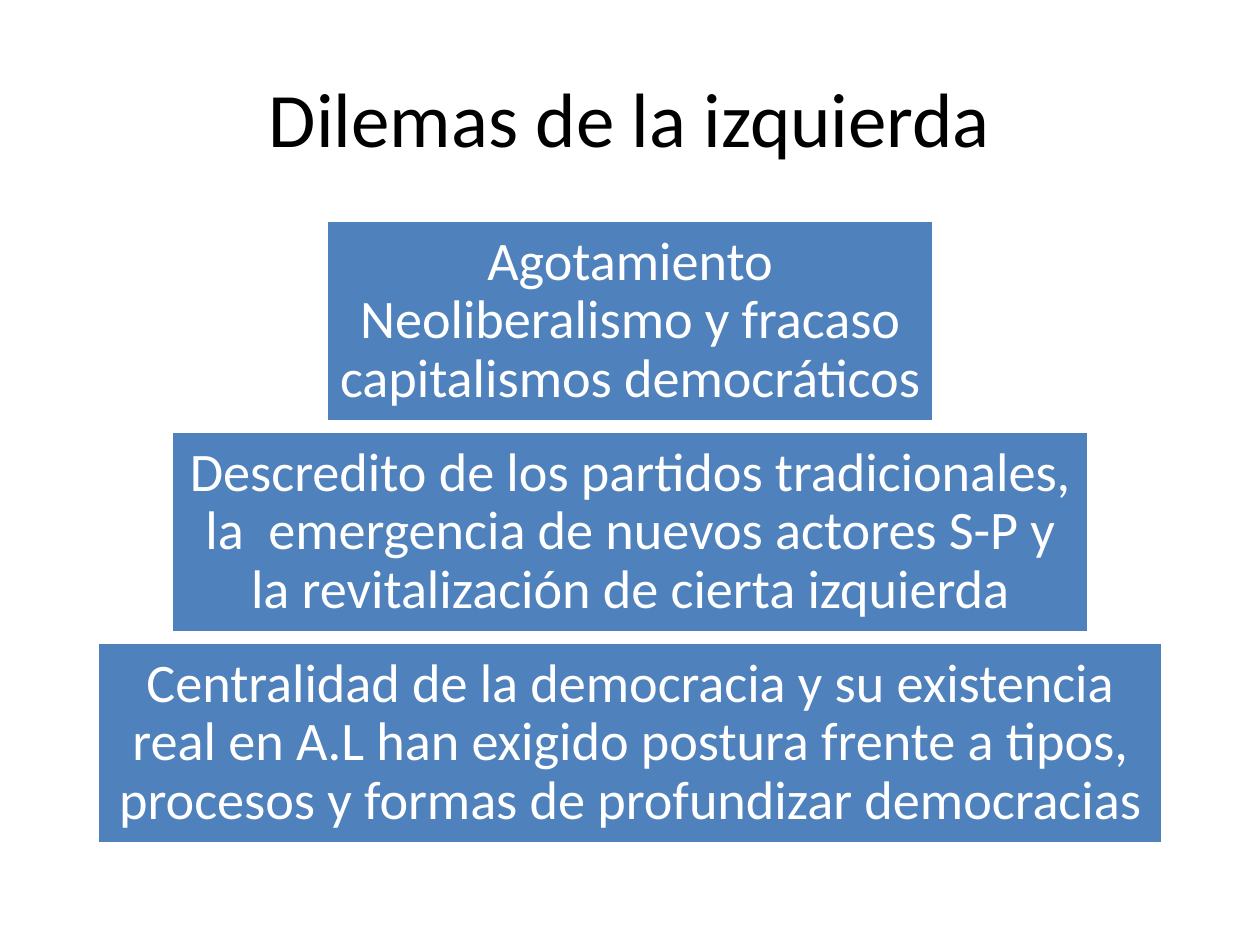
import dataclasses

import pptx
import pptx.dml.color
import pptx.enum.shapes
import pptx.enum.text
import pptx.util


@dataclasses.dataclass(frozen=True)
class Theme:
    font: str = "Calibri"
    ink: str = "000000"
    paper: str = "FFFFFF"
    accent: str = "4F81BD"
    title_size: int = 44
    step_size: int = 31
    outline: int = 2
    inset: float = 0.09


THEME = Theme()
WIDTH, HEIGHT = 10, 7.5
TITLE_BOX = (0.5, 0.3, 9, 1.25)
PYRAMID_BOX = (0.77, 1.75, 8.46, 4.95)
GAP_SHARE = 0.015
STEPS = [
    (0.57, "Agotamiento Neoliberalismo y fracaso capitalismos democráticos"),
    (0.86, "Descredito de los partidos tradicionales, la  emergencia de nuevos "
           "actores S-P y la revitalización de cierta izquierda"),
    (1, "Centralidad de la democracia y su existencia real en A.L han exigido "
        "postura frente a tipos, procesos y formas de profundizar democracias"),
]


def apply_format(target, values):
    for name, value in values.items():
        setattr(target, name, value)


def colour(value):
    return pptx.dml.color.RGBColor.from_string(value)


def write_text(shape, text, size, ink, inset, line_spacing):
    frame = shape.text_frame
    margin = pptx.util.Inches(inset)
    apply_format(frame, {
        "text": text,
        "word_wrap": True,
        "auto_size": pptx.enum.text.MSO_AUTO_SIZE.NONE,
        "vertical_anchor": pptx.enum.text.MSO_ANCHOR.MIDDLE,
        "margin_left": margin, "margin_right": margin,
        "margin_top": margin, "margin_bottom": margin,
    })
    para = frame.paragraphs[0]
    apply_format(para, {
        "alignment": pptx.enum.text.PP_ALIGN.CENTER,
        "line_spacing": line_spacing,
    })
    span = para.runs[0]
    apply_format(span.font, {"name": THEME.font, "size": pptx.util.Pt(size)})
    span.font.color.rgb = colour(ink)


def place_title(page, box, text):
    title = page.shapes.title
    lengths = map(pptx.util.Inches, box)
    apply_format(title, dict(zip(("left", "top", "width", "height"), lengths)))
    write_text(title, text, THEME.title_size, THEME.ink, 0.05, 1.0)


def place_pyramid(page, box, steps):
    left, top, width, height = box
    gap = height * GAP_SHARE
    row = (height - gap * (len(steps) - 1)) / len(steps)
    for index, (share, text) in enumerate(steps):
        step_width = width * share
        place = (left + (width - step_width) / 2, top + index * (row + gap), step_width, row)
        step = page.shapes.add_shape(
            pptx.enum.shapes.MSO_SHAPE.RECTANGLE, *map(pptx.util.Inches, place))
        step.shadow.inherit = False
        step.fill.solid()
        step.fill.fore_color.rgb = colour(THEME.accent)
        step.line.color.rgb = colour(THEME.paper)
        step.line.width = pptx.util.Pt(THEME.outline)
        write_text(step, text, THEME.step_size, THEME.paper, THEME.inset, 0.9)


def main():
    deck = pptx.Presentation()
    apply_format(deck, {
        "slide_width": pptx.util.Inches(WIDTH),
        "slide_height": pptx.util.Inches(HEIGHT),
    })
    page = deck.slides.add_slide(deck.slide_layouts.get_by_name("Title Only"))
    place_title(page, TITLE_BOX, "Dilemas de la izquierda")
    place_pyramid(page, PYRAMID_BOX, STEPS)
    deck.save("out.pptx")


if __name__ == "__main__":
    main()
